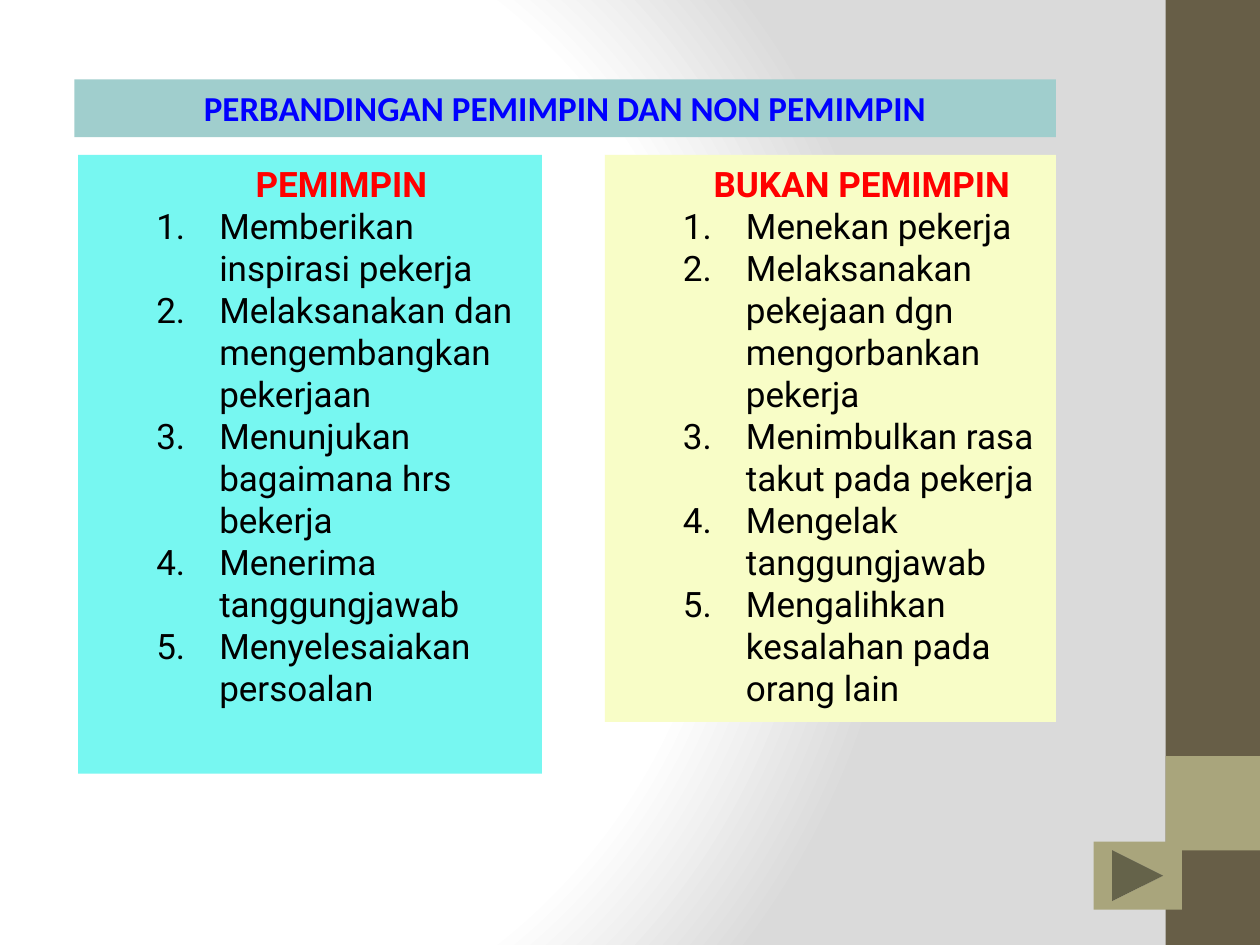
from dataclasses import dataclass

from lxml import etree
from pptx import Presentation, util as u
from pptx.dml.color import RGBColor
from pptx.enum import shapes, text
from pptx.oxml import parse_xml
from pptx.oxml.ns import nsdecls, qn

WIDE, HIGH = 10, 7.5
BROWN = RGBColor(0x67, 0x5E, 0x47)
OLIVE = RGBColor(0xA9, 0xA5, 0x7C)
TEAL = RGBColor(0xA0, 0xCE, 0xCD)
CYAN = RGBColor(0x77, 0xF7, 0xF1)
CREAM = RGBColor(0xF8, 0xFD, 0xC7)
BLUE = RGBColor(0x00, 0x00, 0xFF)
RED = RGBColor(0xFF, 0x00, 0x00)
BLACK = RGBColor(0x00, 0x00, 0x00)
RECT = shapes.MSO_SHAPE.RECTANGLE
NEXT = shapes.MSO_SHAPE.ACTION_BUTTON_FORWARD_OR_NEXT

# Shared edges of the content area and the side bar
TOP, RIGHT, BAR = 1.23, 8.38, 9.25
SIDE = WIDE - BAR


@dataclass
class Panel:
    left: float
    wide: float
    high: float
    fill: RGBColor
    head: str
    items: list[str]


PANELS = [
    Panel(0.62, 3.68, 4.91, CYAN, "PEMIMPIN", [
        "Memberikan inspirasi pekerja",
        "Melaksanakan dan mengembangkan pekerjaan",
        "Menunjukan bagaimana hrs bekerja",
        "Menerima tanggungjawab",
        "Menyelesaiakan persoalan",
    ]),
    Panel(4.8, RIGHT - 4.8, 4.5, CREAM, "BUKAN PEMIMPIN", [
        "Menekan pekerja",
        "Melaksanakan pekejaan dgn mengorbankan pekerja",
        "Menimbulkan rasa takut pada pekerja",
        "Mengelak tanggungjawab",
        "Mengalihkan kesalahan pada orang lain",
    ]),
]


def shade(slide) -> None:
    """Fill the background with a round white to grey gradient."""
    slide.background.fill.gradient()
    old = slide.element.find(".//" + qn("a:gradFill"))
    stops = "".join(
        f'<a:gs pos="{pos * 1000}"><a:srgbClr val="{tint}"/></a:gs>'
        for pos, tint in ((0, "FFFFFF"), (75, "FFFFFF"), (100, "DADADA")))
    new = parse_xml(
        f'<a:gradFill {nsdecls("a")} rotWithShape="1"><a:gsLst>{stops}</a:gsLst>'
        '<a:path path="circle">'
        '<a:fillToRect l="20000" t="50000" r="100000" b="50000"/>'
        '</a:path></a:gradFill>')
    old.getparent().replace(old, new)


def block(slide, left: float, top: float, wide: float, high: float,
          fill: RGBColor, kind=RECT):
    shape = slide.shapes.add_shape(
        kind, u.Inches(left), u.Inches(top), u.Inches(wide), u.Inches(high))
    shape.shadow.inherit = False
    shape.fill.solid()
    shape.fill.fore_color.rgb = fill
    shape.line.fill.background()
    return shape


def frame(shape):
    """Set up a shape for text that starts at its top."""
    body = shape.text_frame
    body.word_wrap = True
    body.vertical_anchor = text.MSO_ANCHOR.TOP
    body.margin_left = body.margin_right = u.Inches(0.12)
    body.margin_top = body.margin_bottom = u.Inches(0.06)
    return body


def write(para, words: str, face: str, tint: RGBColor, bold: bool,
          align=text.PP_ALIGN.CENTER) -> None:
    para.alignment = align
    run = para.add_run()
    run.text = words
    run.font.name = face
    run.font.size = u.Pt(20)
    run.font.bold = bold
    run.font.color.rgb = tint


def indent(para, number: bool) -> None:
    para.level = 1
    props = para._p.get_or_add_pPr()
    props.set("marL", str(u.Inches(1)))
    props.set("indent", str(u.Inches(-0.5)))
    if number:
        etree.SubElement(props, qn("a:buFont"), typeface="+mj-lt")
        etree.SubElement(props, qn("a:buAutoNum"), type="arabicPeriod")
    else:
        etree.SubElement(props, qn("a:buNone"))


def draw(slide, panel: Panel) -> None:
    body = frame(block(slide, panel.left, TOP, panel.wide, panel.high,
                       panel.fill))
    head = body.paragraphs[0]
    indent(head, False)
    write(head, panel.head, "Roboto", RED, True)
    for item in panel.items:
        para = body.add_paragraph()
        indent(para, True)
        write(para, item, "Roboto", BLACK, False, text.PP_ALIGN.LEFT)


def main() -> None:
    deck = Presentation()
    deck.slide_width, deck.slide_height = u.Inches(WIDE), u.Inches(HIGH)
    slide = deck.slides.add_slide(deck.slide_layouts[6])
    shade(slide)

    # Side bar with its square
    block(slide, BAR, 0, SIDE, HIGH, BROWN)
    block(slide, BAR, HIGH - 2 * SIDE, SIDE, SIDE, OLIVE)

    # Title band
    band = block(slide, 0.59, 0.63, RIGHT - 0.59, 0.46, TEAL)
    write(frame(band).paragraphs[0], "PERBANDINGAN PEMIMPIN DAN NON PEMIMPIN",
          "Calibri", BLUE, True)

    # Two lists side by side
    for panel in PANELS:
        draw(slide, panel)

    # Button to the next slide
    block(slide, 8.68, 6.68, 0.7, 0.54, OLIVE, NEXT)
    deck.save("out.pptx")


if __name__ == "__main__":
    main()
